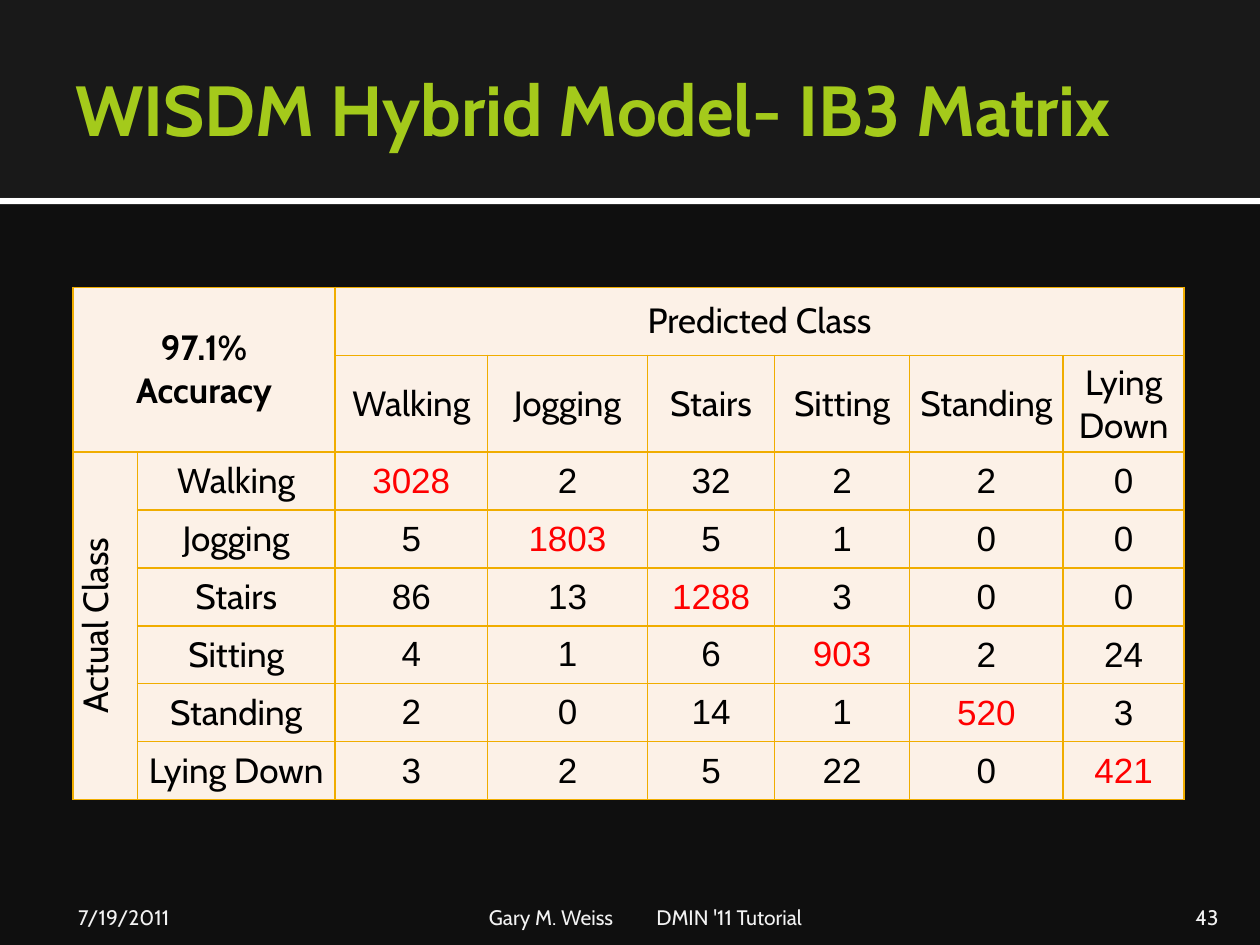
from lxml.etree import SubElement
from pptx import Presentation
from pptx.dml.color import RGBColor
from pptx.enum.shapes import MSO_SHAPE as Shape
from pptx.enum.text import MSO_ANCHOR as Anchor, MSO_AUTO_SIZE as AutoSize, PP_ALIGN as Align
from pptx.oxml.ns import qn
from pptx.util import Inches, Pt

BACKGROUND = RGBColor(0x0F, 0x0F, 0x0F)
BAND = RGBColor(0x19, 0x19, 0x19)
WHITE = RGBColor(0xFF, 0xFF, 0xFF)
GREEN = RGBColor(0xA4, 0xCA, 0x1B)
FOOTER = RGBColor(0xF2, 0xF2, 0xF2)
CREAM = RGBColor(0xFC, 0xF1, 0xE7)
GOLD = RGBColor(0xF0, 0xAD, 0x00)
BLACK = RGBColor(0x00, 0x00, 0x00)
RED = RGBColor(0xFF, 0x00, 0x00)

ACTIVITIES = ["Walking", "Jogging", "Stairs", "Sitting", "Standing", "Lying Down"]
COUNTS = [
    [3028, 2, 32, 2, 2, 0],
    [5, 1803, 5, 1, 0, 0],
    [86, 13, 1288, 3, 0, 0],
    [4, 1, 6, 903, 2, 24],
    [2, 0, 14, 1, 520, 3],
    [3, 2, 5, 22, 0, 421],
]
COLUMN_WIDTHS = [0.51, 1.57, 1.21, 1.27, 1.01, 1.07, 1.22, 0.96]
ROW_HEIGHTS = [0.54] * 2 + [0.46] * 6


def style_text(frame, size, color, font="Cabin", bold=False, align=Align.LEFT):
    """Format every paragraph and run of a text frame."""
    for para in frame.paragraphs:
        para.alignment = align
        for span in para.runs:
            span.font.size, span.font.name, span.font.bold = Pt(size), font, bold
            span.font.color.rgb = color


def set_margins(target, left, top, right, bottom):
    """Set the four insets of a text frame or cell in inches."""
    target.margin_left, target.margin_top = Inches(left), Inches(top)
    target.margin_right, target.margin_bottom = Inches(right), Inches(bottom)


def add_band(slide, top, height, color):
    """Draw a plain band across the slide."""
    band = slide.shapes.add_shape(Shape.RECTANGLE, 0, Inches(top), Inches(10), Inches(height))
    band.fill.solid()
    band.fill.fore_color.rgb = color
    band.line.fill.background()
    band.shadow.inherit = False


def place_title(slide, text):
    """Move the title placeholder onto the header band and format it."""
    title = slide.shapes.title
    title.left, title.top = Inches(0.5), Inches(0.17)
    title.width, title.height = Inches(9), Inches(1.37)
    frame = title.text_frame
    frame.text = text
    frame.auto_size, frame.vertical_anchor = AutoSize.NONE, Anchor.MIDDLE
    set_margins(frame, 0.1, 0.05, 0.05, 0.05)
    style_text(frame, 40.5, GREEN, bold=True)
    slide.shapes._spTree.append(title._element)


def add_footer(slide, text, left, width, insets, align=Align.LEFT):
    """Add one footer text box and return its paragraph."""
    box = slide.shapes.add_textbox(Inches(left), Inches(7.08), Inches(width), Inches(0.3))
    frame = box.text_frame
    frame.text = text
    frame.word_wrap, frame.vertical_anchor = True, Anchor.BOTTOM
    set_margins(frame, insets[0], 0.05, insets[1], 0)
    style_text(frame, 12, FOOTER, align=align)
    return frame.paragraphs[0]


def add_tab_stop(para, position):
    """Give a paragraph one left tab stop."""
    stops = SubElement(para._p.get_or_add_pPr(), qn("a:tabLst"))
    SubElement(stops, qn("a:tab"), pos=str(Inches(position)), algn="l")


def style_cell(cell, tight):
    """Give a cell its borders, fill, anchor and insets."""
    properties = cell._tc.get_or_add_tcPr()
    for side in ("lnL", "lnR", "lnT", "lnB"):
        border = SubElement(properties, qn(f"a:{side}"), w=str(Pt(1)))
        fill = SubElement(border, qn("a:solidFill"))
        SubElement(fill, qn("a:srgbClr"), val=str(GOLD))
    cell.fill.solid()
    cell.fill.fore_color.rgb = CREAM
    cell.vertical_anchor = Anchor.MIDDLE
    if tight:
        set_margins(cell, 0.01, 0.01, 0.01, 0)


def write_cell(cell, text, **style):
    """Write centred table text."""
    cell.text = text
    style_text(cell.text_frame, 20, style.pop("color", BLACK), align=Align.CENTER, **style)


def add_matrix(slide):
    """Add the confusion matrix with its merged headings."""
    frame = slide.shapes.add_table(len(ROW_HEIGHTS), len(COLUMN_WIDTHS), Inches(0.58),
                                   Inches(2.28), Inches(8.82), Inches(3.97))
    table = frame.table
    table.first_row = table.horz_banding = False
    for column, width in zip(table.columns, COLUMN_WIDTHS):
        column.width = Inches(width)
    for row, height in zip(table.rows, ROW_HEIGHTS):
        row.height = Inches(height)
    frame.height = Inches(3.97)

    for r in range(len(ROW_HEIGHTS)):
        for c in range(len(COLUMN_WIDTHS)):
            tight = r == 7 or (r > 0 and c > 5) or (r > 1 and c == 0)
            style_cell(table.cell(r, c), tight)

    table.cell(0, 0).merge(table.cell(1, 1))
    table.cell(0, 2).merge(table.cell(0, 7))
    table.cell(2, 0).merge(table.cell(7, 0))
    write_cell(table.cell(0, 0), "97.1%\vAccuracy", bold=True)
    write_cell(table.cell(0, 2), "Predicted Class")
    write_cell(table.cell(2, 0), "Actual Class")
    table.cell(2, 0)._tc.get_or_add_tcPr().set("vert", "vert270")

    for i, (activity, counts) in enumerate(zip(ACTIVITIES, COUNTS)):
        write_cell(table.cell(1, i + 2), activity.replace(" ", "\v"))
        write_cell(table.cell(i + 2, 1), activity)
        for j, count in enumerate(counts):
            color = RED if i == j else BLACK
            write_cell(table.cell(i + 2, j + 2), str(count), color=color, font="Arial")


def main():
    """Build and save the slide."""
    deck = Presentation()
    deck.slide_width, deck.slide_height = Inches(10), Inches(7.5)
    slide = deck.slides.add_slide(deck.slide_layouts[5])
    slide.background.fill.solid()
    slide.background.fill.fore_color.rgb = BACKGROUND
    add_band(slide, 1.57, 0.05, WHITE)
    add_band(slide, 0, 1.57, BAND)
    place_title(slide, "WISDM Hybrid Model- IB3 Matrix")
    add_footer(slide, "7/19/2011", 0.5, 2.33, (0.12, 0.05))
    credit = add_footer(slide, "Gary M. Weiss\tDMIN '11 Tutorial", 3.83, 5.08, (0.05, 0.05))
    add_tab_stop(credit, 1.33)
    add_footer(slide, "43", 8.97, 0.8, (0.1, 0.1), Align.RIGHT)
    add_matrix(slide)
    deck.save("out.pptx")


if __name__ == "__main__":
    main()
